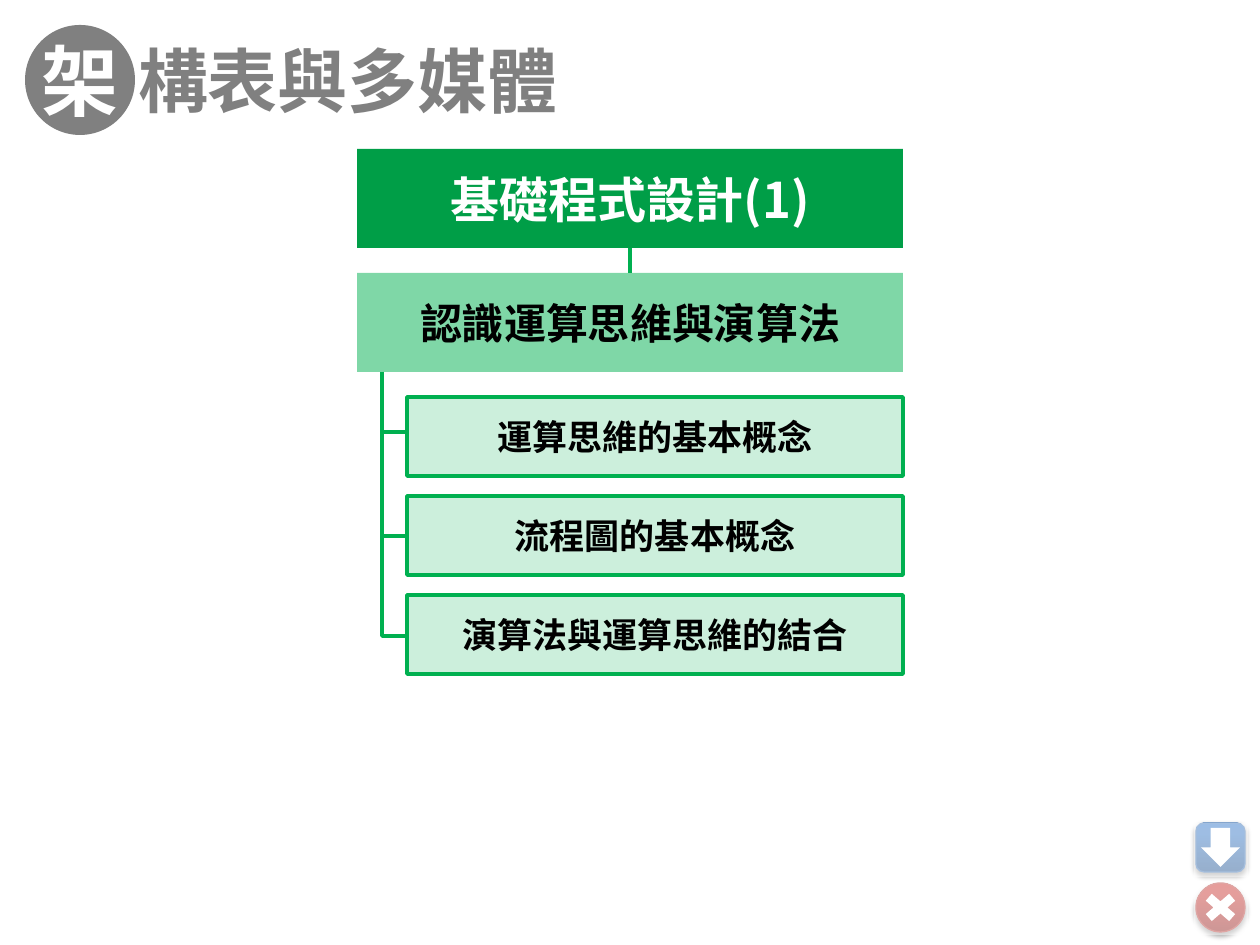
"""Build the course structure slide with its outline chart and navigation buttons."""
from lxml import etree
from pptx import Presentation
from pptx.dml.color import RGBColor
from pptx.enum import shapes, text
from pptx.oxml import parse_xml
from pptx.oxml.ns import nsdecls, qn
from pptx.util import Emu, Pt

SCALE = 914400 / 126
FONT = "Noto Sans CJK SC"
GREEN, GRAY, WHITE, BLACK = "00B050", "808080", "FFFFFF", "000000"
KIND = shapes.MSO_SHAPE

BADGE, TITLE = "架", "構表與多媒體"
CHAPTER, SECTION = "基礎程式設計(1)", "認識運算思維與演算法"
TOPICS = [
    ("運算思維的基本概念", 432),
    ("流程圖的基本概念", 536),
    ("演算法與運算思維的結合", 636),
]
LEFT, TOP, WIDTH, HEIGHT = 357, 149, 546, 99
GAP = 25
PITCH, TOPIC_HEIGHT = 99, 79
BUTTONS = [
    dict(kind=KIND.ROUNDED_RECTANGLE, top=823, line="4B7EBC",
         stops=[(0, "2F5F99"), (80, "3D7CC7"), (100, "3A7CCB")],
         icon=KIND.DOWN_ARROW, place=(1201, 828, 39, 39)),
    dict(kind=KIND.OVAL, top=883, line="BF4C48",
         stops=[(0, "9C2F2D"), (80, "CB3E3A"), (100, "CE3B37")],
         icon=KIND.MATH_MULTIPLY, place=(1198, 888, 45, 39)),
]


def px(*values):
    return [Emu(round(value * SCALE)) for value in values]


def color(value):
    return RGBColor.from_string(value)


def set_line(item, value, width=2):
    item.line.color.rgb = color(value)
    item.line.width = Pt(width)


def write(box, words, size, ink, font=FONT, align="CENTER", wrap=False, margins=(12, 5)):
    frame = box.text_frame
    side, edge = px(*margins)
    settings = dict(word_wrap=wrap, vertical_anchor=text.MSO_ANCHOR.MIDDLE,
                    margin_left=side, margin_right=side, margin_top=edge, margin_bottom=edge)
    for name, value in settings.items():
        setattr(frame, name, value)
    para = frame.paragraphs[0]
    para.alignment = getattr(text.PP_ALIGN, align)
    span = para.add_run()
    span.text = words
    for name, value in dict(name=font, size=Pt(size), bold=True).items():
        setattr(span.font, name, value)
    span.font.color.rgb = color(ink)
    east = etree.SubElement(span.font._element, qn("a:ea"))
    east.set("typeface", FONT)


def add_block(page, kind, place, fill, alpha=100, line=None):
    box = page.shapes.add_shape(kind, *px(*place))
    box.shadow.inherit = False
    box.fill.solid()
    box.fill.fore_color.rgb = color(fill)
    if alpha < 100:
        tint = box._element.spPr.find(qn("a:solidFill"))[0]
        etree.SubElement(tint, qn("a:alpha")).set("val", str(alpha * 1000))
    if line:
        set_line(box, line)
    else:
        box.line.fill.background()
    return box


def add_elbow(page, left, top, right, bottom):
    points = [px(left, bottom), px(right, bottom)]
    builder = page.shapes.build_freeform(*px(left, top))
    builder.add_line_segments(points, close=False)
    elbow = builder.convert_to_shape()
    elbow.shadow.inherit = False
    elbow.fill.background()
    set_line(elbow, GREEN)


def add_button(page, kind, top, line, stops, icon, place):
    box = add_block(page, kind, (1196, top, 49, 49), WHITE)
    set_line(box, line, 0.75)
    properties = box._element.spPr
    marks = "".join(f'<a:gs pos="{pos * 1000}"><a:srgbClr val="{tone}"/></a:gs>'
                    for pos, tone in stops)
    gradient = parse_xml(f'<a:gradFill {nsdecls("a")} rotWithShape="1"><a:gsLst>{marks}</a:gsLst>'
                         '<a:lin ang="16200000" scaled="0"/></a:gradFill>')
    properties.replace(properties.find(qn("a:solidFill")), gradient)
    properties.find(qn("a:effectLst")).append(parse_xml(
        f'<a:outerShdw {nsdecls("a")} blurRad="{Pt(3.1)}" dist="{Pt(1.8)}" dir="5400000" '
        'rotWithShape="0"><a:srgbClr val="000000"><a:alpha val="35000"/></a:srgbClr></a:outerShdw>'))
    add_block(page, icon, place, WHITE)


def add_outline(page):
    section_top = TOP + HEIGHT + GAP
    section_bottom = section_top + HEIGHT
    trunk, indent = LEFT + GAP, LEFT + 2 * GAP
    for words, end in TOPICS:
        add_elbow(page, trunk, section_bottom, indent, end)
    section = add_block(page, KIND.RECTANGLE, (LEFT, section_top, WIDTH, HEIGHT), GREEN, 50)
    write(section, SECTION, 24, BLACK)
    chapter = add_block(page, KIND.RECTANGLE, (LEFT, TOP, WIDTH, HEIGHT), "009E47")
    write(chapter, CHAPTER, 28, WHITE, margins=(5, 5))
    stem = page.shapes.add_connector(shapes.MSO_CONNECTOR.STRAIGHT, 0, 0, 0, 0)
    stem.begin_connect(chapter, 2)
    stem.end_connect(section, 0)
    set_line(stem, GREEN)
    etree.SubElement(stem._element.spPr, qn("a:effectLst"))
    for row, (words, end) in enumerate(TOPICS):
        place = (indent, section_bottom + GAP + row * PITCH, WIDTH - 2 * GAP, TOPIC_HEIGHT)
        topic = add_block(page, KIND.RECTANGLE, place, GREEN, 20, GREEN)
        write(topic, words, 20, BLACK, "Roboto")


def main():
    deck = Presentation()
    deck.slide_width, deck.slide_height = px(1260, 945)
    page = deck.slides.add_slide(deck.slide_layouts[6])
    for button in BUTTONS:
        add_button(page, **button)
    for top in (823, 881):
        add_block(page, KIND.RECTANGLE, (1194, top, 54, 54), WHITE, 50)
    badge = add_block(page, KIND.OVAL, (25, 25, 110, 110), GRAY)
    write(badge, BADGE, 44, WHITE)
    title = page.shapes.add_textbox(*px(123, 25, 496, 110))
    write(title, TITLE, 40, GRAY, align="LEFT", wrap=True, margins=(15, 5))
    add_outline(page)
    deck.save("out.pptx")


if __name__ == "__main__":
    main()
